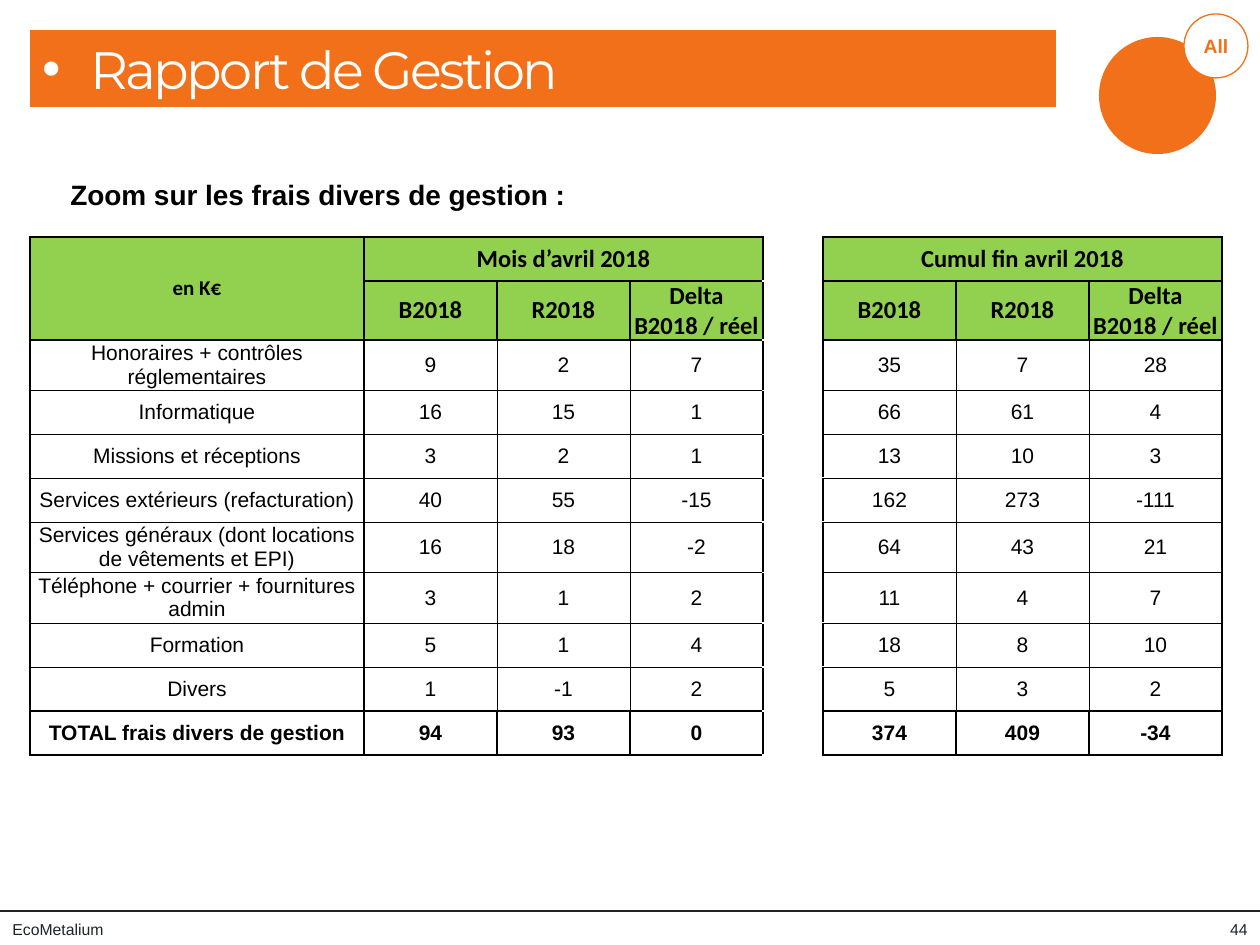
from lxml import etree
from pptx import Presentation
from pptx.dml.color import RGBColor
from pptx.enum.shapes import MSO_CONNECTOR, MSO_SHAPE
from pptx.enum.text import MSO_ANCHOR, PP_ALIGN
from pptx.oxml.ns import qn
from pptx.util import Emu, Pt

ELLIPSE, STRAIGHT = MSO_SHAPE.OVAL, MSO_CONNECTOR.STRAIGHT
LEFT, CENTER, RIGHT = PP_ALIGN.LEFT, PP_ALIGN.CENTER, PP_ALIGN.RIGHT
MIDDLE = MSO_ANCHOR.MIDDLE

ORANGE = RGBColor(0xF2, 0x70, 0x19)
GREEN = RGBColor(0x92, 0xD0, 0x50)
DARK = RGBColor(0x1D, 0x25, 0x2B)
BLACK = RGBColor(0, 0, 0)
WHITE = RGBColor(0xFF, 0xFF, 0xFF)

EMU_PER_PX = 914400 / 126
TITLE_LAYOUT = 5

COLUMN_WIDTHS = [334, 133, 133, 133, 60, 133, 133, 133]
ROW_HEIGHT = 44
HEADER_ROWS = 2
GAP_COLUMN = 4
GROUPS = {1: "Mois d’avril 2018", 5: "Cumul fin avril 2018"}
MEASURES = ["B2018", "R2018", "Delta B2018 / réel"]
EXPENSES = [
    ("Honoraires + contrôles réglementaires", 9, 2, 7, 35, 7, 28),
    ("Informatique", 16, 15, 1, 66, 61, 4),
    ("Missions et réceptions", 3, 2, 1, 13, 10, 3),
    ("Services extérieurs (refacturation)", 40, 55, -15, 162, 273, -111),
    ("Services généraux (dont locations de vêtements et EPI)", 16, 18, -2, 64, 43, 21),
    ("Téléphone + courrier + fournitures admin", 3, 1, 2, 11, 4, 7),
    ("Formation", 5, 1, 4, 18, 8, 10),
    ("Divers", 1, -1, 2, 5, 3, 2),
    ("TOTAL frais divers de gestion", 94, 93, 0, 374, 409, -34),
]
TOTAL_ROW = HEADER_ROWS + len(EXPENSES) - 1


def px(*lengths):
    return [Emu(round(length * EMU_PER_PX)) for length in lengths]


def write(frame, text, size, color=BLACK, font="Arial", bold=False, align=LEFT):
    """Fill the first paragraph of a text frame and return its span."""
    para = frame.paragraphs[0]
    para.alignment = align
    span = para.add_run()
    span.text = text
    span.font.size = Pt(size)
    span.font.name = font
    span.font.bold = bold
    span.font.color.rgb = color
    return span


def add_text(page, bounds, text, wrap=True, anchor=MIDDLE, **text_format):
    box = page.shapes.add_textbox(*px(*bounds))
    box.text_frame.word_wrap = wrap
    box.text_frame.vertical_anchor = anchor
    write(box.text_frame, text, **text_format)


def add_circle(page, left, top, diameter, fill, line=None):
    circle = page.shapes.add_shape(ELLIPSE, *px(left, top, diameter, diameter))
    circle.shadow.inherit = False
    circle.fill.solid()
    circle.fill.fore_color.rgb = fill
    if line is None:
        circle.line.fill.background()
    else:
        circle.line.color.rgb = line
        circle.line.width = Pt(0.75)
    return circle


def add_rule(page, top, width):
    rule = page.shapes.add_connector(STRAIGHT, *px(0, top, width, top))
    rule.line.color.rgb = DARK
    rule.line.width = Pt(1.5)
    etree.SubElement(rule._element.spPr, qn("a:effectLst"))


def set_title(page, text):
    title = page.shapes.title
    title.left, title.top, title.width, title.height = px(30, 30, 1026, 77)
    title.fill.solid()
    title.fill.fore_color.rgb = ORANGE
    frame = title.text_frame
    frame.vertical_anchor = MIDDLE
    properties = frame.paragraphs[0]._p.get_or_add_pPr()
    indent = px(48)[0]
    properties.set("marL", str(indent))
    properties.set("indent", str(-indent))
    etree.SubElement(properties, qn("a:buFont"), typeface="Arial")
    etree.SubElement(properties, qn("a:buChar"), char="•")
    span = write(frame, text, size=30, color=WHITE, font="Montserrat")
    span._r.get_or_add_rPr().set("spc", "-150")


def border_widths(row, column):
    """Give the widths in points by side: thin inside the body, heavy elsewhere."""
    widths = dict.fromkeys("LRTB", 1)
    if column == GAP_COLUMN:
        del widths["T"], widths["B"]
        return widths
    if HEADER_ROWS <= row < TOTAL_ROW:
        if row > HEADER_ROWS:
            widths["T"] = 0.5
        if row < TOTAL_ROW - 1:
            widths["B"] = 0.5
        if column in (2, 3, 6, 7):
            widths["L"] = 0.5
        if column in (1, 2, 5, 6):
            widths["R"] = 0.5
    return widths


def format_cell(cell, row, column):
    properties = cell._tc.get_or_add_tcPr()
    for side, width in border_widths(row, column).items():
        border = etree.SubElement(properties, qn(f"a:ln{side}"), w=str(Pt(width)))
        fill = etree.SubElement(border, qn("a:solidFill"))
        etree.SubElement(fill, qn("a:srgbClr"), val=str(BLACK))
    cell.margin_left = cell.margin_right = cell.margin_top = cell.margin_bottom = 0
    cell.vertical_anchor = MIDDLE
    cell.fill.solid()
    is_header = row < HEADER_ROWS and column != GAP_COLUMN
    cell.fill.fore_color.rgb = GREEN if is_header else WHITE


def add_expense_table(page):
    row_count = TOTAL_ROW + 1
    bounds = px(30, 237, sum(COLUMN_WIDTHS), ROW_HEIGHT * row_count)
    table = page.shapes.add_table(row_count, len(COLUMN_WIDTHS), *bounds).table
    table.first_row = table.horz_banding = False
    for column, width in zip(table.columns, px(*COLUMN_WIDTHS)):
        column.width = width
    for row_index, row in enumerate(table.rows):
        row.height = px(ROW_HEIGHT)[0]
        for column_index, cell in enumerate(row.cells):
            format_cell(cell, row_index, column_index)

    def write_cell(row, column, text, **text_format):
        write(table.cell(row, column).text_frame, text, align=CENTER, **text_format)

    table.cell(0, 0).merge(table.cell(1, 0))
    write_cell(0, 0, "en K€", size=12, font="Calibri", bold=True)
    for first, group in GROUPS.items():
        table.cell(0, first).merge(table.cell(0, first + len(MEASURES) - 1))
        write_cell(0, first, group, size=14, font="Calibri", bold=True)
        for column, measure in enumerate(MEASURES, first):
            write_cell(1, column, measure, size=14, font="Calibri", bold=True)

    text_columns = [c for c in range(len(COLUMN_WIDTHS)) if c != GAP_COLUMN]
    for row, expense in enumerate(EXPENSES, HEADER_ROWS):
        for column, value in zip(text_columns, expense):
            write_cell(row, column, str(value), size=12, bold=row == TOTAL_ROW)


def main():
    deck = Presentation()
    deck.slide_width, deck.slide_height = px(1260, 945)
    page = deck.slides.add_slide(deck.slide_layouts[TITLE_LAYOUT])

    set_title(page, "Rapport de Gestion")
    add_circle(page, 1099, 37, 117, ORANGE)
    badge = add_circle(page, 1184, 14, 64, WHITE, line=ORANGE)
    badge.text_frame.margin_left = badge.text_frame.margin_right = 0
    badge.text_frame.vertical_anchor = MIDDLE
    write(badge.text_frame, "All", size=11, color=ORANGE, bold=True, align=CENTER)

    add_text(page, (58, 171, 527, 47), "Zoom sur les frais divers de gestion :",
             wrap=False, size=16, bold=True)
    add_expense_table(page)

    add_rule(page, 911, 1260)
    add_text(page, (0, 914, 433, 31), "EcoMetalium", size=9, color=DARK)
    add_text(page, (1198, 914, 62, 31), "44", size=9, color=DARK, align=RIGHT)
    deck.save("out.pptx")


if __name__ == "__main__":
    main()
